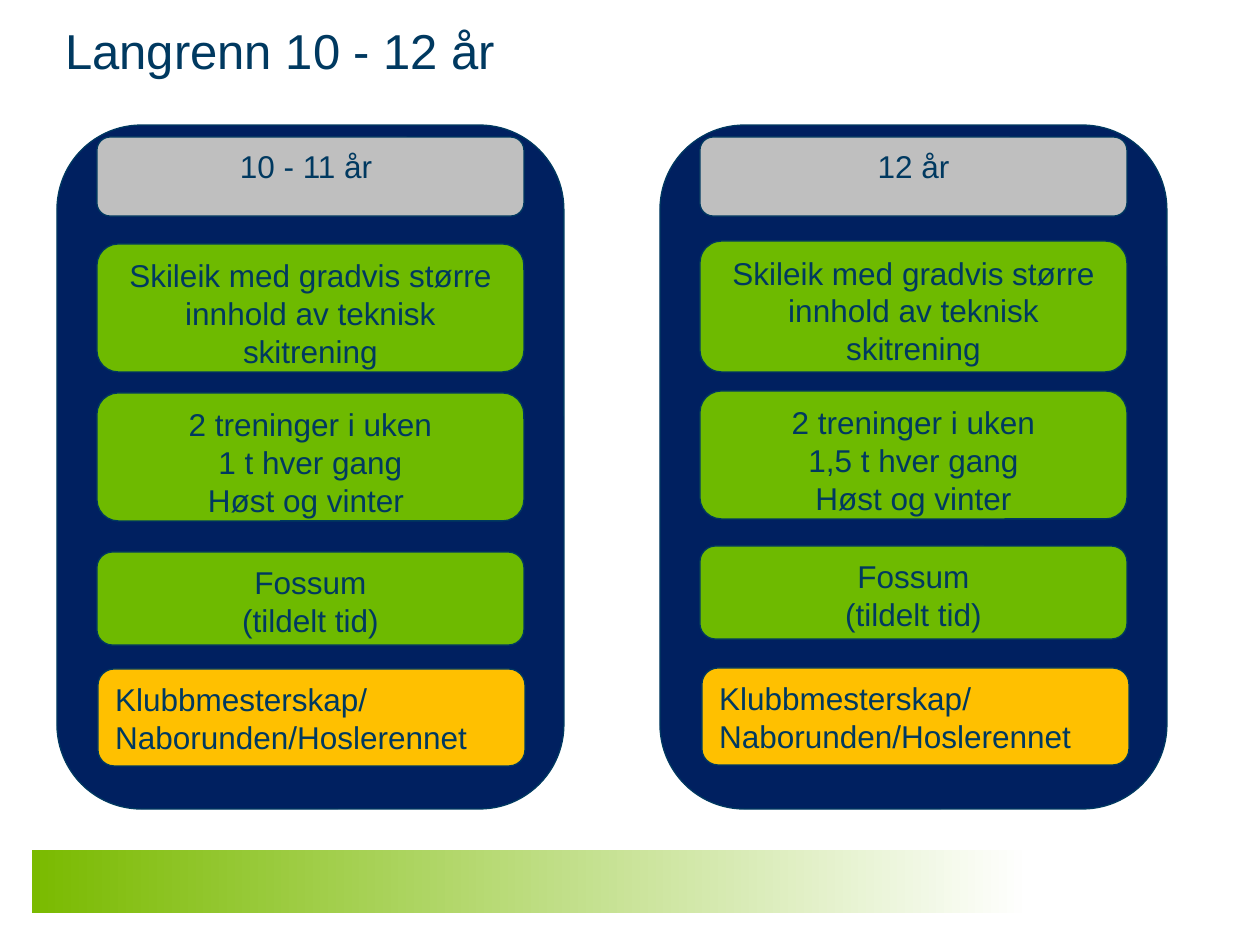
from pptx import Presentation
from pptx.dml.color import RGBColor
from pptx.enum.shapes import MSO_SHAPE
from pptx.enum.text import MSO_ANCHOR, PP_ALIGN
from pptx.util import Emu, Pt

PX = 914400 / 126
NAVY = RGBColor(0x00, 0x20, 0x60)
INK = RGBColor(0x00, 0x39, 0x60)
GREY = RGBColor(0xBF, 0xBF, 0xBF)
GREEN = RGBColor(0x6E, 0xBA, 0x00)
BAND_GREEN = RGBColor(0x7A, 0xBA, 0x00)
AMBER = RGBColor(0xFF, 0xC0, 0x00)
WHITE = RGBColor(0xFF, 0xFF, 0xFF)

PANEL_W, PANEL_H = 507, 684
CARD_W = 427

SKILL = "Skileik med gradvis større innhold av teknisk skitrening"
PLACE = "Fossum\n(tildelt tid)"
RACES = "Klubbmesterskap/\nNaborunden/Hoslerennet"

# Each card: left and top within the panel, height, fill, alignment, text
CENTER, LEFT = PP_ALIGN.CENTER, PP_ALIGN.LEFT
AGE_12 = [
    (40, 12, 79, GREY, CENTER, "12 år"),
    (40, 116, 131, GREEN, CENTER, SKILL),
    (40, 266, 128, GREEN, CENTER, "2 treninger i uken\n1,5 t hver gang\nHøst og vinter"),
    (40, 421, 93, GREEN, CENTER, PLACE),
    (42, 543, 97, AMBER, LEFT, RACES),
]
AGE_10_11 = [
    (40, 12, 79, GREY, CENTER, "10 - 11 år "),
    (40, 119, 128, GREEN, CENTER, SKILL),
    (40, 268, 128, GREEN, CENTER, "2 treninger i uken\n1 t hver gang\nHøst og vinter "),
    (40, 427, 93, GREEN, CENTER, PLACE),
    (41, 544, 97, AMBER, LEFT, RACES),
]


def emu(*lengths):
    return [Emu(round(n * PX)) for n in lengths]


def write(sp, text, size=18, color=INK, align=LEFT, anchor=MSO_ANCHOR.TOP):
    tf = sp.text_frame
    tf.word_wrap = True
    tf.vertical_anchor = anchor
    for i, line in enumerate(text.split("\n")):
        p = tf.paragraphs[0] if i == 0 else tf.add_paragraph()
        p.alignment = align
        r = p.add_run()
        r.text = line
        r.font.name = "Arial"
        r.font.size = Pt(size)
        r.font.color.rgb = color


def rounded(slide, x, y, w, h, color):
    sp = slide.shapes.add_shape(MSO_SHAPE.ROUNDED_RECTANGLE, *emu(x, y, w, h))
    sp.shadow.inherit = False
    sp.fill.solid()
    sp.fill.fore_color.rgb = color
    sp.line.color.rgb = INK
    sp.line.width = Pt(0.75)
    return sp


def footer_band(slide, x, y, w, h):
    sp = slide.shapes.add_shape(MSO_SHAPE.RECTANGLE, *emu(x, y, w, h))
    sp.shadow.inherit = False
    sp.line.fill.background()
    sp.fill.gradient()
    sp.fill.gradient_angle = 0
    for stop, position, color in zip(sp.fill.gradient_stops, (0, 1), (BAND_GREEN, WHITE)):
        stop.position = position
        stop.color.rgb = color


def title(slide, x, y, w, h):
    sp = slide.shapes.add_textbox(*emu(x, y, w, h))
    write(sp, "Langrenn 10 - 12 år", size=28, anchor=MSO_ANCHOR.MIDDLE)


def age_panel(slide, x, y, cards):
    rounded(slide, x, y, PANEL_W, PANEL_H, NAVY)
    for dx, dy, h, color, align, text in cards:
        sp = rounded(slide, x + dx, y + dy, CARD_W, h, color)
        write(sp, text, align=align)


def main():
    prs = Presentation()
    prs.slide_width, prs.slide_height = emu(1260, 945)
    slide = prs.slides.add_slide(prs.slide_layouts[6])
    footer_band(slide, 32, 850, 998, 63)
    title(slide, 53, 11, 1134, 77)
    age_panel(slide, 660, 125, AGE_12)
    age_panel(slide, 57, 125, AGE_10_11)
    prs.save("out.pptx")


if __name__ == "__main__":
    main()
